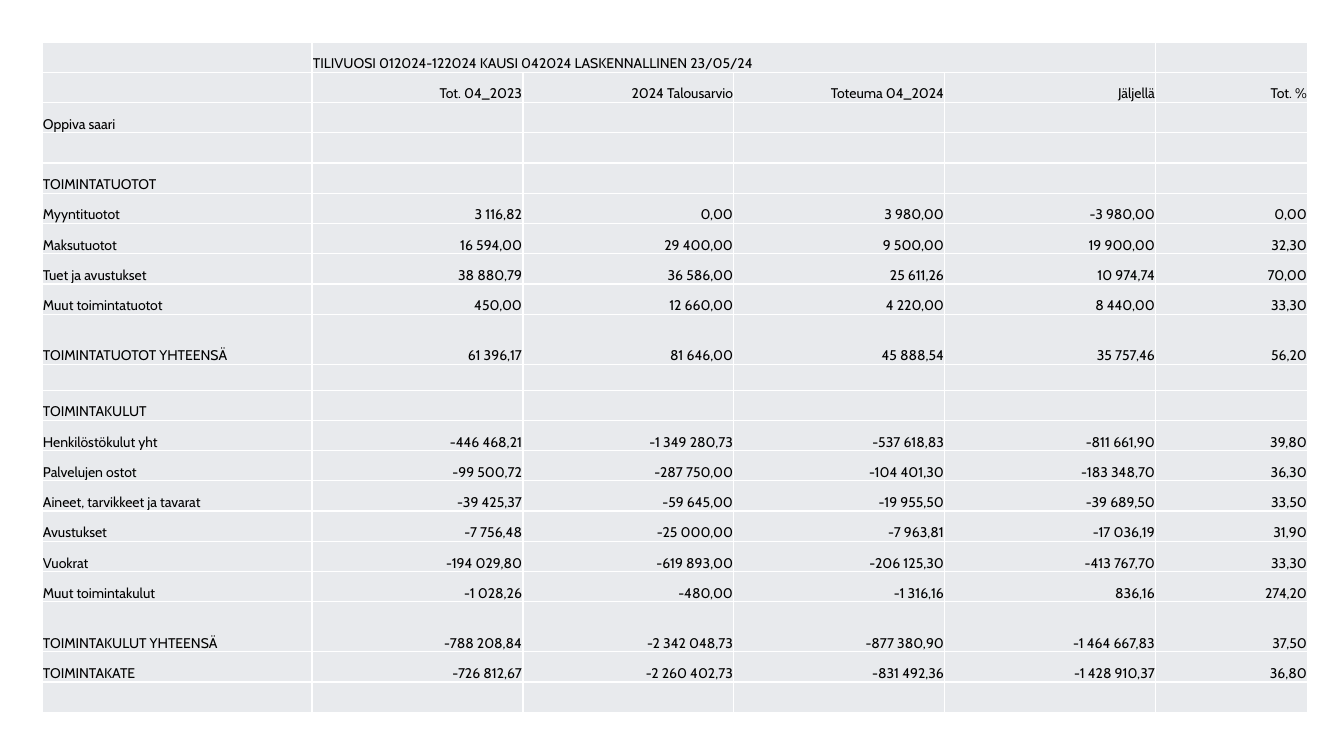
from lxml import etree
from pptx import Presentation
from pptx import util as u
from pptx.dml.color import RGBColor
from pptx.enum import text
from pptx.oxml.ns import qn

TITLE = "TILIVUOSI 012024-122024 KAUSI 042024 LASKENNALLINEN 23/05/24"
ROWS = [
    ("", TITLE),
    ("", "Tot. 04_2023", "2024 Talousarvio", "Toteuma 04_2024", "Jäljellä", "Tot. %"),
    ("Oppiva saari",),
    (),
    ("TOIMINTATUOTOT",),
    ("Myyntituotot", "3 116,82", "0,00", "3 980,00", "-3 980,00", "0,00"),
    ("Maksutuotot", "16 594,00", "29 400,00", "9 500,00", "19 900,00", "32,30"),
    ("Tuet ja avustukset", "38 880,79", "36 586,00", "25 611,26", "10 974,74", "70,00"),
    ("Muut toimintatuotot", "450,00", "12 660,00", "4 220,00", "8 440,00", "33,30"),
    ("TOIMINTATUOTOT YHTEENSÄ", "61 396,17", "81 646,00", "45 888,54", "35 757,46", "56,20"),
    (),
    ("TOIMINTAKULUT",),
    ("Henkilöstökulut yht", "-446 468,21", "-1 349 280,73", "-537 618,83", "-811 661,90", "39,80"),
    ("Palvelujen ostot", "-99 500,72", "-287 750,00", "-104 401,30", "-183 348,70", "36,30"),
    ("Aineet, tarvikkeet ja tavarat", "-39 425,37", "-59 645,00", "-19 955,50", "-39 689,50", "33,50"),
    ("Avustukset", "-7 756,48", "-25 000,00", "-7 963,81", "-17 036,19", "31,90"),
    ("Vuokrat", "-194 029,80", "-619 893,00", "-206 125,30", "-413 767,70", "33,30"),
    ("Muut toimintakulut", "-1 028,26", "-480,00", "-1 316,16", "836,16", "274,20"),
    ("TOIMINTAKULUT YHTEENSÄ", "-788 208,84", "-2 342 048,73", "-877 380,90", "-1 464 667,83", "37,50"),
    ("TOIMINTAKATE", "-726 812,67", "-2 260 402,73", "-831 492,36", "-1 428 910,37", "36,80"),
    (),
]
COLUMN_WIDTHS = [270, 211, 211, 211, 211, 152]
SPECIAL_HEIGHTS = {9: 50, 10: 26, 18: 50}  # the two totals and the gap between sections
LEFT, TOP, HEIGHT = 42, 42, 671

FONT, FONT_SIZE = "Cabin", 10
BLACK = RGBColor(0x00, 0x00, 0x00)
WHITE = RGBColor(0xFF, 0xFF, 0xFF)
CELL_GREY = RGBColor(0xE8, 0xEA, 0xED)


def px(length):
    return u.Inches(length / 100.8)


def add_borders(cell):
    properties = cell._tc.get_or_add_tcPr()
    for side in ("a:lnL", "a:lnR", "a:lnT", "a:lnB"):
        line = etree.SubElement(properties, qn(side), w=str(u.Pt(1)))
        fill = etree.SubElement(line, qn("a:solidFill"))
        etree.SubElement(fill, qn("a:srgbClr"), val=str(WHITE))


def format_cell(cell, words, align):
    add_borders(cell)
    cell.fill.solid()
    cell.fill.fore_color.rgb = CELL_GREY
    cell.vertical_anchor = text.MSO_ANCHOR.BOTTOM
    cell.margin_left = cell.margin_right = cell.margin_top = px(1)
    cell.margin_bottom = 0
    para = cell.text_frame.paragraphs[0]
    para.alignment = align
    if words:
        span = para.add_run()
        span.text = words
        span.font.name = FONT
        span.font.size = u.Pt(FONT_SIZE)
        span.font.bold = False
        span.font.color.rgb = BLACK
    else:
        # An empty cell needs its own text size, or its row grows
        etree.SubElement(para._p, qn("a:endParaRPr"), sz=str(FONT_SIZE * 100))


def main():
    deck = Presentation()
    deck.slide_width, deck.slide_height = px(1344), px(756)
    page = deck.slides.add_slide(deck.slide_layouts[6])

    frame = page.shapes.add_table(len(ROWS), len(COLUMN_WIDTHS), px(LEFT), px(TOP),
                                  px(sum(COLUMN_WIDTHS)), px(HEIGHT))
    table = frame.table
    table.first_row = table.horz_banding = False
    for column, width in zip(table.columns, COLUMN_WIDTHS):
        column.width = px(width)

    regular_height = (HEIGHT - sum(SPECIAL_HEIGHTS.values())) / (len(ROWS) - len(SPECIAL_HEIGHTS))
    for r, values in enumerate(ROWS):
        table.rows[r].height = px(SPECIAL_HEIGHTS.get(r, regular_height))
        for c in range(len(COLUMN_WIDTHS)):
            words = values[c] if c < len(values) else ""
            left_aligned = c == 0 or r == 0
            align = text.PP_ALIGN.LEFT if left_aligned else text.PP_ALIGN.RIGHT
            format_cell(table.cell(r, c), words, align)
    table.cell(0, 1).merge(table.cell(0, 4))

    deck.save("out.pptx")


if __name__ == "__main__":
    main()
